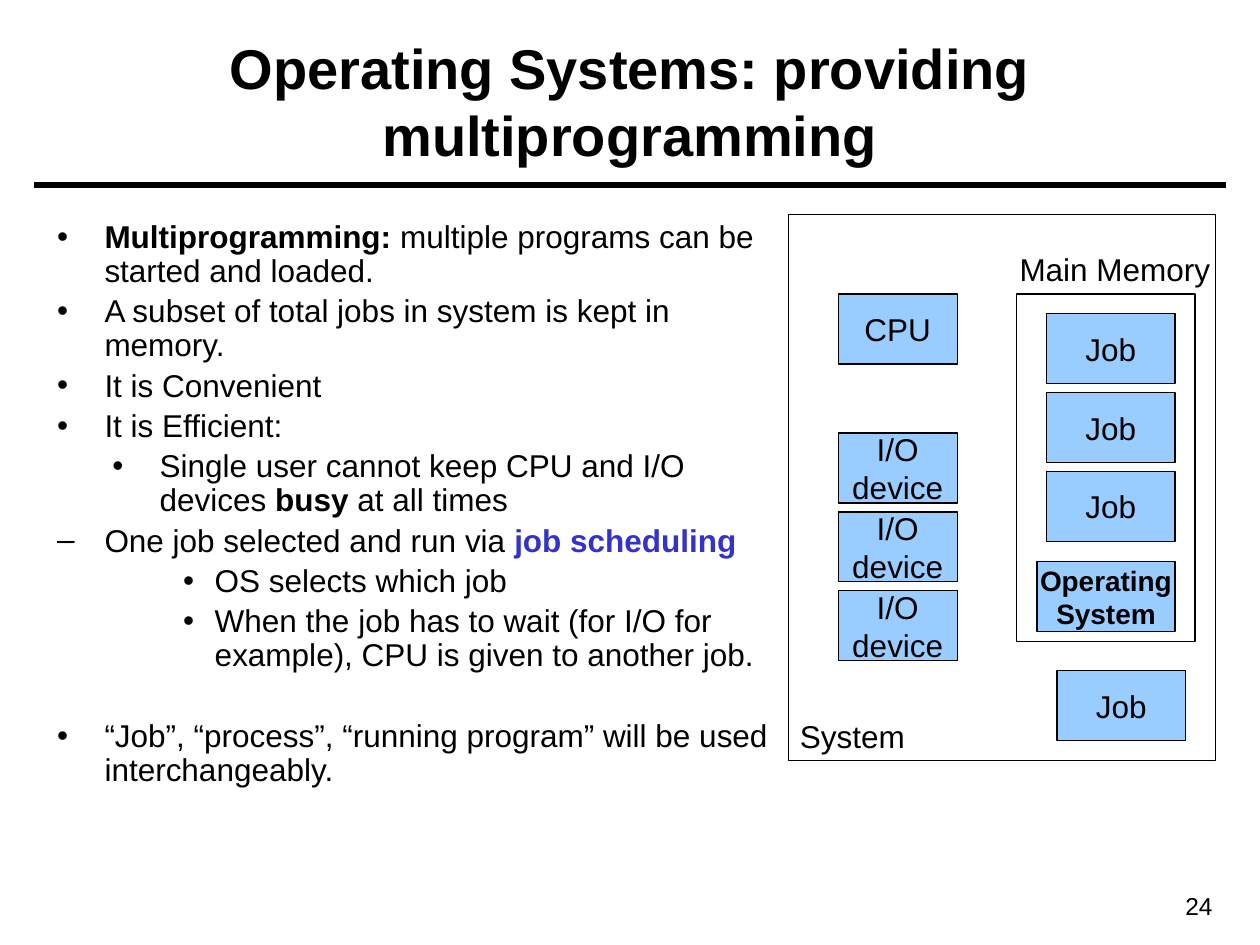
import pptx
import pptx.dml.color
import pptx.enum.shapes
import pptx.enum.text
import pptx.util
from dataclasses import dataclass
from lxml import etree

Pt = pptx.util.Pt
RGB = pptx.dml.color.RGBColor
Align = pptx.enum.text.PP_ALIGN
Anchor = pptx.enum.text.MSO_ANCHOR
AutoSize = pptx.enum.text.MSO_AUTO_SIZE
DRAWING = "http://schemas.openxmlformats.org/drawingml/2006/main"


@dataclass(frozen=True)
class Theme:
    font: str = "Arial"
    ink: RGB = RGB.from_string("000000")
    accent: RGB = RGB.from_string("3333CC")
    box: RGB = RGB.from_string("99CCFF")
    title: int = 32
    text: int = 18
    small: int = 16
    number: int = 14


THEME = Theme()

# Indent styles: level, left margin, hanging indent, bullet
MAIN = (0, 27, -27, "•")
DASH = (0, 27, -27, "–")
SUB = (1, 58.5, -27, "•")
DEEP = (1, 90, -18, "•")
LINE_GAP, SECTION_GAP = 3.6, 26.8

# Each run is (text, format); each point is (style, space before, runs)
BOLD = {"bold": True}
KEY_TERM = {"bold": True, "color": THEME.accent}
POINTS = [
    (MAIN, LINE_GAP, [("Multiprogramming:", BOLD),
                      (" multiple programs can be started and loaded.", {})]),
    (MAIN, LINE_GAP, [("A subset of total jobs in system is kept in memory.", {})]),
    (MAIN, LINE_GAP, [("It is Convenient", {})]),
    (MAIN, LINE_GAP, [("It is Efficient:", {})]),
    (SUB, LINE_GAP, [("Single user cannot keep CPU and I/O devices ", {}),
                     ("busy", BOLD), (" at all times", {})]),
    (DASH, LINE_GAP, [("One job selected and run via ", {}),
                      ("job scheduling", KEY_TERM)]),
    (DEEP, LINE_GAP, [("OS selects which job", {})]),
    (DEEP, LINE_GAP, [("When the job has to wait (for I/O for example), "
                       "CPU is given to another job.", {})]),
    (MAIN, SECTION_GAP, [("“Job”, “process”, “running program” will be used "
                          "interchangeably.", {})]),
]


def set_attributes(target, values):
    for name, value in values.items():
        setattr(target, name, value)


def place(shape, left, top, width, height):
    set_attributes(shape, {"left": Pt(left), "top": Pt(top),
                           "width": Pt(width), "height": Pt(height)})


def format_run(run, size=THEME.text, bold=False, color=THEME.ink):
    set_attributes(run.font, {"name": THEME.font, "size": Pt(size), "bold": bold})
    run.font.color.rgb = color


def write(frame, text, align, frame_values, **run_format):
    frame.text = text
    set_attributes(frame, frame_values)
    for paragraph in frame.paragraphs:
        paragraph.alignment = align
        for run in paragraph.runs:
            format_run(run, **run_format)


def set_bullet(paragraph, left_margin, indent, character):
    properties = paragraph._p.get_or_add_pPr()
    properties.set("marL", str(Pt(left_margin)))
    properties.set("indent", str(Pt(indent)))
    etree.SubElement(properties, f"{{{DRAWING}}}buFont", typeface=THEME.font)
    etree.SubElement(properties, f"{{{DRAWING}}}buChar", char=character)


def add_title(slide, text):
    title = slide.shapes.title
    place(title, 25.5, 12.5, 669, 90)
    write(title.text_frame, text, Align.CENTER,
          {"vertical_anchor": Anchor.MIDDLE, "auto_size": AutoSize.NONE},
          size=THEME.title, bold=True)


def add_points(slide, points):
    body = slide.placeholders[1]
    place(body, 25.5, 122.75, 430.5, 368.5)
    frame = body.text_frame
    frame.auto_size = AutoSize.NONE
    for index, (style, space, runs) in enumerate(points):
        paragraph = frame.add_paragraph() if index else frame.paragraphs[0]
        level, left_margin, indent, character = style
        set_attributes(paragraph, {"level": level, "line_spacing": 0.9,
                                   "space_before": Pt(space)})
        set_bullet(paragraph, left_margin, indent, character)
        for text, run_format in runs:
            run = paragraph.add_run()
            run.text = text
            format_run(run, **run_format)


def add_rule(slide, left, right, top):
    rule = slide.shapes.add_connector(pptx.enum.shapes.MSO_CONNECTOR.STRAIGHT,
                                      Pt(left), Pt(top), Pt(right), Pt(top))
    rule.line.color.rgb = THEME.ink
    rule.line.width = Pt(3)
    etree.SubElement(rule._element.spPr, f"{{{DRAWING}}}effectLst")


def add_frame(slide, left, top, width, height):
    shape = slide.shapes.add_shape(pptx.enum.shapes.MSO_SHAPE.RECTANGLE,
                                   Pt(left), Pt(top), Pt(width), Pt(height))
    shape.shadow.inherit = False
    shape.fill.background()
    shape.line.color.rgb = THEME.ink
    shape.line.width = Pt(0.75)
    return shape


def add_box(slide, text, left, top, width, height=40, **run_format):
    box = add_frame(slide, left, top, width, height)
    box.fill.solid()
    box.fill.fore_color.rgb = THEME.box
    write(box.text_frame, text, Align.CENTER,
          {"vertical_anchor": Anchor.MIDDLE, "word_wrap": False}, **run_format)


def add_label(slide, text, left, top, width, height=29, align=Align.LEFT,
              margin_right=0, **run_format):
    label = slide.shapes.add_textbox(Pt(left), Pt(top), Pt(width), Pt(height))
    write(label.text_frame, text, align,
          {"word_wrap": True, "margin_right": Pt(margin_right)}, **run_format)


def add_system_diagram(slide):
    step, device_left, job_left, job_width = 45, 479, 598, 73.5
    memory_top = 168

    # System and main memory outlines
    add_frame(slide, 450.5, 122.5, 244, 312)
    add_frame(slide, 581, memory_top, 102, 198.5)
    add_label(slide, "Main Memory", 575.5, 139.5, 123)
    add_label(slide, "System", 450, 406, 74)

    # Processor and devices
    add_box(slide, "CPU", device_left, memory_top, 68)
    for row in range(3):
        add_box(slide, "I/O\vdevice", device_left, 247.5 + row * step, 68)

    # Jobs in memory, the operating system, and a job waiting outside
    for row in range(3):
        add_box(slide, "Job", job_left, 179.25 + row * step, job_width)
    add_box(slide, "Operating\nSystem", 592.5, 321, 79, size=THEME.small, bold=True)
    add_box(slide, "Job", 604, 383.25, job_width)


def main():
    presentation = pptx.Presentation()
    set_attributes(presentation, {"slide_width": Pt(720), "slide_height": Pt(540)})
    slide = presentation.slides.add_slide(presentation.slide_layouts[1])

    # Heading
    add_rule(slide, 19.5, 700.5, 105.75)
    add_title(slide, "Operating Systems: providing multiprogramming")

    # Content
    add_points(slide, POINTS)
    add_system_diagram(slide)

    # Page number
    add_label(slide, "24", 625, 505.5, 75, 24.5, align=Align.RIGHT,
              margin_right=7.2, size=THEME.number)

    presentation.save("out.pptx")


if __name__ == "__main__":
    main()
